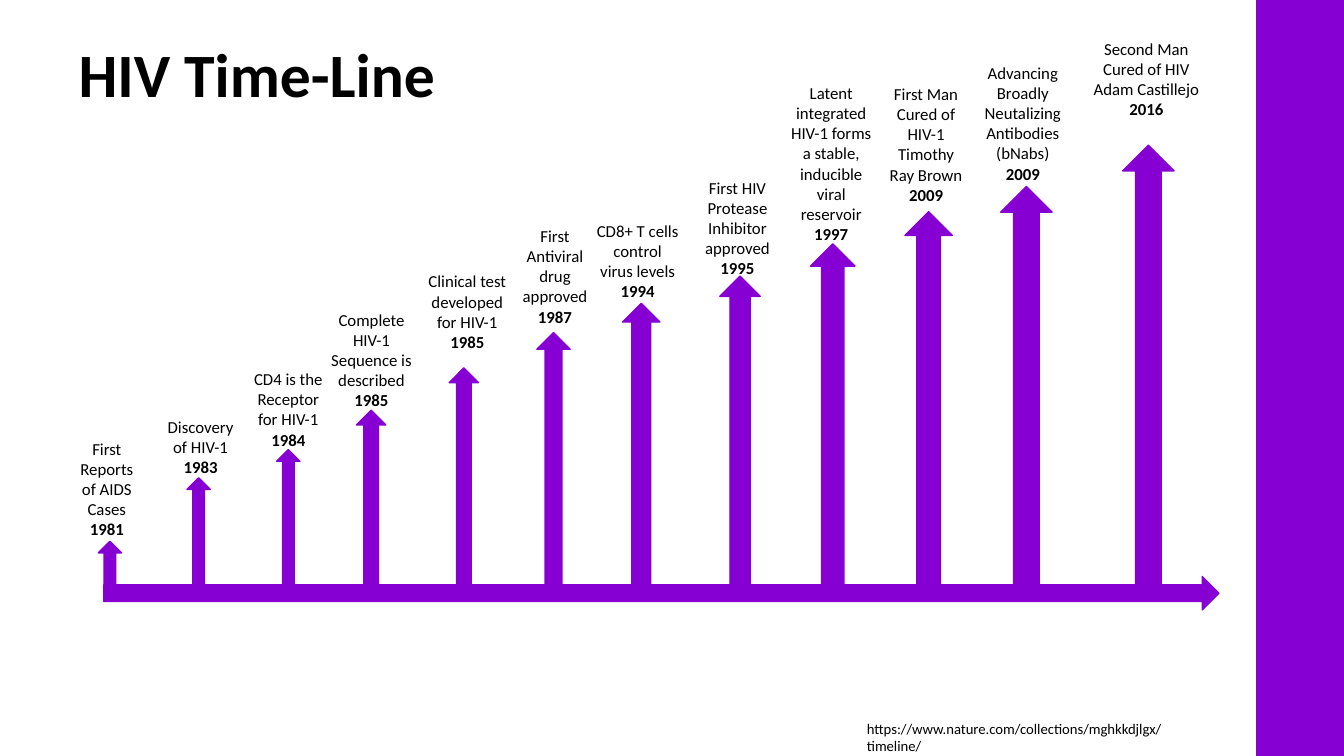
"""Build a slide with a rising HIV time-line from 1981 to 2016."""
from pptx import Presentation
from pptx import util as u
from pptx.dml.color import RGBColor
from pptx.enum import shapes, text

THEME = {
    "font": "Calibri",
    "ink": RGBColor(0, 0, 0),
    "tint": RGBColor(0x86, 0x00, 0xD3),
    "title": 44, "label": 12, "link": 10.5,
}
BASE = 5.96

# label, year, label box (left, top, width, height), arrow (middle, length, girth)
EVENTS = [
    ("First Reports of AIDS Cases", "1981", (0.68, 4.3, 0.76, 1.11), (1.09, 0.43, 0.23)),
    ("Discovery of HIV-1", "1983", (1.51, 4.08, 0.96, 0.71), (1.97, 1.22, 0.23)),
    ("CD4 is the Receptor for HIV-1", "1984", (2.38, 3.61, 0.96, 0.91), (2.86, 1.5, 0.23)),
    ("Complete HIV-1 Sequence is described", "1985", (3.17, 3.02, 1.03, 1.11), (3.68, 1.89, 0.29)),
    ("Clinical test developed for HIV-1", "1985", (4.12, 2.64, 1.03, 0.91), (4.6, 2.31, 0.29)),
    ("First Antiviral drug approved", "1987", (4.99, 2.19, 1.03, 1.11), (5.49, 2.66, 0.33)),
    ("CD8+ T cells control virus levels", "1994", (5.81, 2.14, 1.03, 0.91), (6.36, 2.95, 0.37)),
    ("First HIV Protease Inhibitor approved", "1995", (6.8, 1.71, 1.03, 1.11), (7.34, 3.22, 0.4)),
    ("Latent integrated HIV-1 forms a stable, inducible viral reservoir", "1997",
     (7.73, 0.77, 1.03, 1.72), (8.26, 3.54, 0.44)),
    ("First Man Cured of HIV-1 Timothy Ray Brown", "2009", (8.67, 0.78, 1.03, 1.31), (9.21, 3.86, 0.47)),
    ("Advancing Broadly Neutalizing Antibodies (bNabs)", "2009",
     (9.63, 0.57, 1.03, 1.31), (10.18, 4.11, 0.51)),
    ("Second Man Cured of HIV Adam Castillejo", "2016", (10.66, 0.33, 1.42, 0.91), (11.39, 4.52, 0.51)),
]


def write(box, lines, size, align):
    frame = box.text_frame
    look = {"word_wrap": True, "auto_size": text.MSO_AUTO_SIZE.NONE,
            "vertical_anchor": text.MSO_ANCHOR.TOP}
    for name, value in look.items():
        setattr(frame, name, value)
    frame.text = "\n".join(line for line, bold in lines)
    for par, (line, bold) in zip(frame.paragraphs, lines):
        par.alignment = align
        form = {"name": THEME["font"], "size": u.Pt(size), "bold": bold}
        for name, value in form.items():
            setattr(par.font, name, value)
        par.font.color.rgb = THEME["ink"]


def block(home, kind, place, line=True):
    shape = home.shapes.add_shape(kind, *map(u.Inches, place))
    shape.shadow.inherit = False
    shape.fill.solid()
    shape.fill.fore_color.rgb = THEME["tint"]
    if line:
        shape.line.color.rgb = THEME["tint"]
        shape.line.width = u.Pt(1)
    else:
        shape.line.fill.background()
    return shape


deck = Presentation()
deck.slide_width, deck.slide_height = u.Inches(13.33), u.Inches(7.5)
slide = deck.slides.add_slide(deck.slide_layouts[5])

title = slide.shapes.title
spot = {"left": 0.68, "top": 0.31, "width": 4.78, "height": 0.84}
for name, value in spot.items():
    setattr(title, name, u.Inches(value))
write(title, [("HIV Time-Line", True)], THEME["title"], text.PP_ALIGN.LEFT)

block(slide, shapes.MSO_SHAPE.RECTANGLE, (12.46, 0, 0.87, 7.5), line=False)

link = slide.shapes.add_textbox(*map(u.Inches, (8.5, 7.09, 3.59, 0.28)))
write(link, [("https://www.nature.com/collections/mghkkdjlgx/timeline/", False)],
      THEME["link"], text.PP_ALIGN.LEFT)

chart = slide.shapes.add_group_shape()
arrow = shapes.MSO_SHAPE.RIGHT_ARROW
block(chart, arrow, (1.03, 5.72, 11.06, 0.33))

for label, year, place, (mid, size, girth) in EVENTS:
    foot = 5.8 if year == "1981" else BASE
    stem = block(chart, arrow, (mid - size / 2, foot - size / 2 - girth / 2, size, girth))
    stem.rotation = 270
    box = slide.shapes.add_textbox(*map(u.Inches, place))
    write(box, [(label, False), (year, True)], THEME["label"], text.PP_ALIGN.CENTER)

deck.save("out.pptx")
